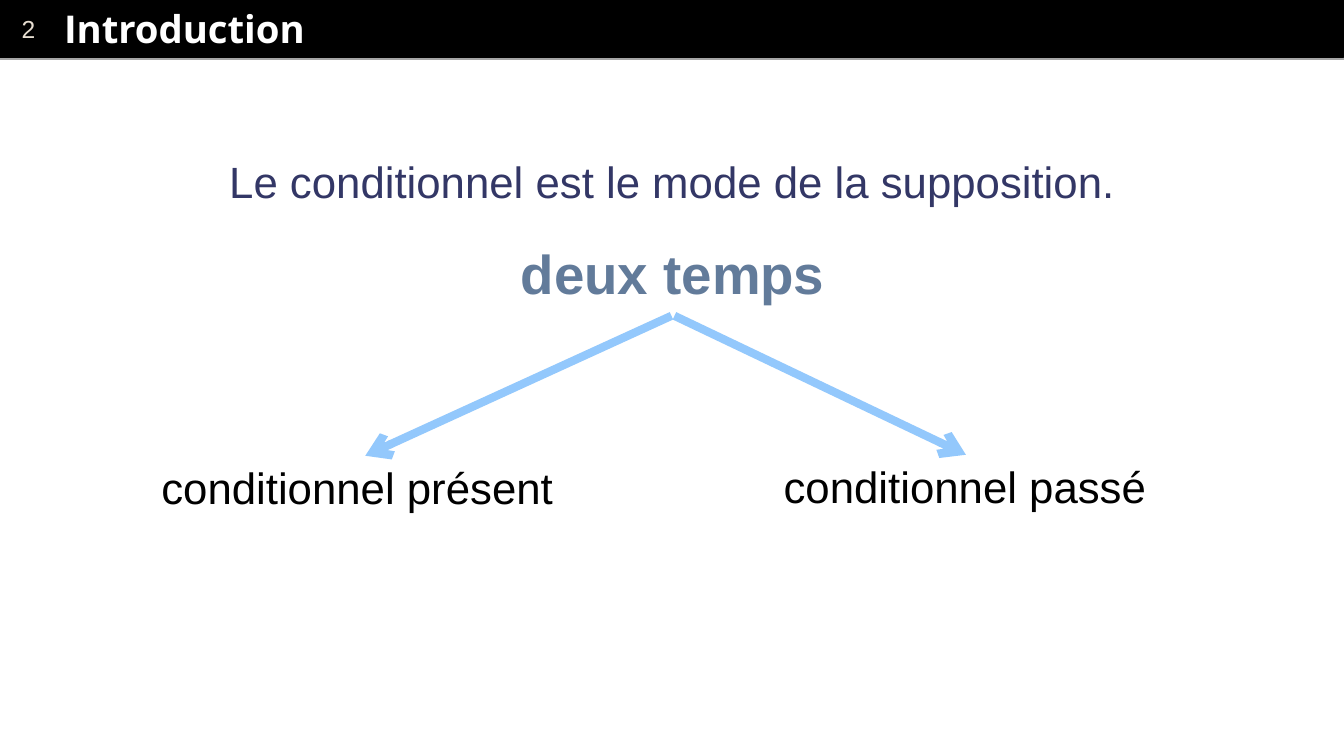
from dataclasses import dataclass

from lxml.etree import SubElement
from pptx import Presentation
from pptx.dml.color import RGBColor
from pptx.enum.shapes import MSO_CONNECTOR, MSO_SHAPE
from pptx.enum.text import MSO_ANCHOR, PP_ALIGN
from pptx.oxml.ns import qn
from pptx.util import Pt


@dataclass(frozen=True)
class Theme:
    body_font: str = "Arial"
    title_font: str = "Open Sans"
    black: str = "000000"
    white: str = "FFFFFF"
    beige: str = "E7DED1"
    grey: str = "A6A6A6"
    navy: str = "333766"
    slate: str = "627B9A"
    sky: str = "93C8FC"
    number_size: int = 18
    title_size: int = 28
    text_size: int = 32
    key_size: int = 40


THEME = Theme()
WIDTH, HEIGHT = 982.8, 552.96
BAR_HEIGHT = 41.76


def write_text(shape, text, size, color, font=THEME.body_font, bold=False,
               align=PP_ALIGN.LEFT, anchor=MSO_ANCHOR.TOP, inset=(7.2, 3.6)):
    frame = shape.text_frame
    side, end = (Pt(value) for value in inset)
    frame_format = {"word_wrap": True, "vertical_anchor": anchor,
                    "margin_left": side, "margin_right": side,
                    "margin_top": end, "margin_bottom": end}
    for name, value in frame_format.items():
        setattr(frame, name, value)
    para = frame.paragraphs[0]
    para.alignment = align
    span = para.add_run()
    span.text = text
    for name, value in {"name": font, "size": Pt(size), "bold": bold}.items():
        setattr(span.font, name, value)
    span.font.color.rgb = RGBColor.from_string(color)


def add_text(page, place, text, size, color, **text_format):
    box = page.shapes.add_textbox(*(Pt(value) for value in place))
    write_text(box, text, size, color, **text_format)


def add_number_bar(page, number):
    bar = page.shapes.add_shape(MSO_SHAPE.RECTANGLE, 0, 0, Pt(WIDTH), Pt(BAR_HEIGHT))
    bar.shadow.inherit = False
    bar.fill.solid()
    bar.fill.fore_color.rgb = RGBColor.from_string(THEME.black)
    bar.line.color.rgb = RGBColor.from_string(THEME.black)
    bar.line.width = Pt(0.75)
    write_text(bar, number, THEME.number_size, THEME.beige,
               anchor=MSO_ANCHOR.MIDDLE, inset=(15.84, 3.6))


def add_line(page, start, end, color, width, arrow=False):
    line = page.shapes.add_connector(
        MSO_CONNECTOR.STRAIGHT, *(Pt(value) for value in (*start, *end)))
    line.line.color.rgb = RGBColor.from_string(color)
    line.line.width = Pt(width)
    if arrow:
        SubElement(line.line._get_or_add_ln(), qn("a:tailEnd"), type="arrow")
    SubElement(line._element.spPr, qn("a:effectLst"))


def main():
    deck = Presentation()
    deck.slide_width, deck.slide_height = Pt(WIDTH), Pt(HEIGHT)
    page = deck.slides.add_slide(deck.slide_layouts[6])

    # Header: number, rule and title
    add_number_bar(page, "2")
    add_line(page, (0, 43.2), (WIDTH, 43.2), THEME.grey, 2)
    add_text(page, (43.92, 0.72, 925.2, 40.32), "Introduction",
             THEME.title_size, THEME.white, font=THEME.title_font, bold=True,
             anchor=MSO_ANCHOR.MIDDLE, inset=(2.88, 2.88))

    # Definition and key phrase
    add_text(page, (98.64, 109.44, 786.24, 46), "Le conditionnel est le mode de la supposition.",
             THEME.text_size, THEME.navy, align=PP_ALIGN.CENTER)
    add_text(page, (343.44, 172.08, 296.64, 55.44), "deux temps",
             THEME.key_size, THEME.slate, bold=True, align=PP_ALIGN.CENTER)

    # The two tenses, each with its arrow
    branches = [
        ("conditionnel présent", (110.88, 333.36, 312.48, 46.08), (491, 231), (267.12, 333.36)),
        ("conditionnel passé", (565.92, 332.64, 281.52, 46.08), (493.2, 231), (706.32, 332.64)),
    ]
    for tense, place, start, end in branches:
        add_text(page, place, tense, THEME.text_size, THEME.black)
        add_line(page, start, end, THEME.sky, 6, arrow=True)

    deck.save("out.pptx")


if __name__ == "__main__":
    main()
